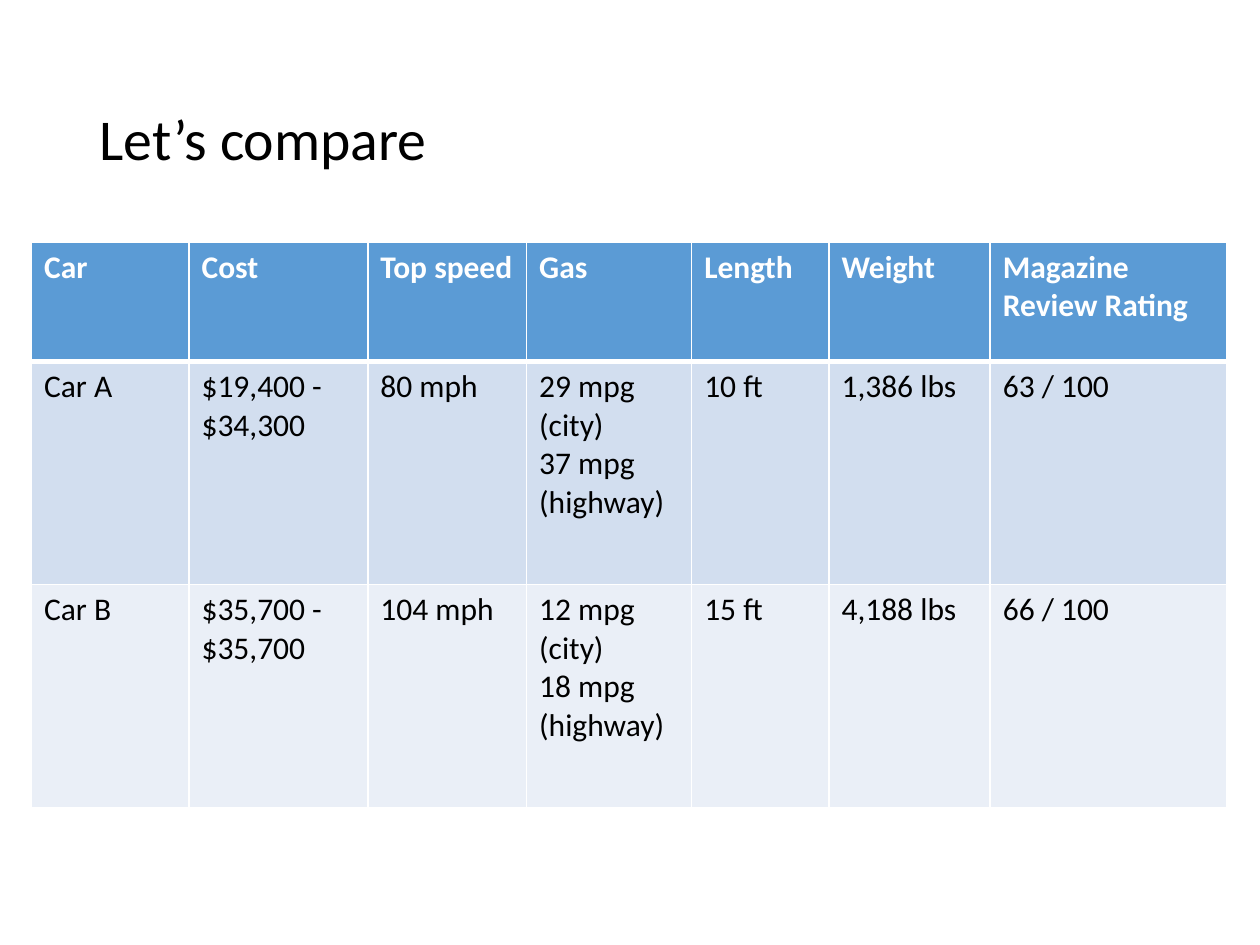
from typing import NamedTuple

from lxml.etree import SubElement
from pptx import Presentation
from pptx.dml.color import RGBColor
from pptx.enum.text import MSO_ANCHOR, PP_ALIGN
from pptx.oxml.ns import qn
from pptx.slide import Slide
from pptx.util import Inches, Pt

FONT = "Calibri"
COLUMN_WIDTHS = (1.25, 1.42, 1.26, 1.31, 1.09, 1.28, 1.88)


class TableRow(NamedTuple):
    height: float
    fill: str
    text_color: str
    bold: bool
    bottom_border: float
    cells: tuple[str, ...]


ROWS = (
    TableRow(0.95, "5B9BD5", "FFFFFF", True, 3,
             ("Car", "Cost", "Top speed", "Gas", "Length", "Weight", "Magazine Review Rating")),
    TableRow(1.77, "D2DEEF", "000000", False, 1,
             ("Car A", "$19,400 - $34,300", "80 mph", "29 mpg (city)\n37 mpg (highway)",
              "10 ft", "1,386 lbs", "63 / 100")),
    TableRow(1.77, "EAEFF7", "000000", False, 1,
             ("Car B", "$35,700 - $35,700", "104 mph", "12 mpg (city)\n18 mpg (highway)",
              "15 ft", "4,188 lbs", "66 / 100")),
)


def color(value: str) -> RGBColor:
    return RGBColor.from_string(value)


def format_text(text_frame, size: float, text_color: str, bold: bool = False) -> None:
    for paragraph in text_frame.paragraphs:
        for run in paragraph.runs:
            run.font.name = FONT
            run.font.size = Pt(size)
            run.font.bold = bold
            run.font.color.rgb = color(text_color)


def set_borders(cell, top: float, bottom: float) -> None:
    """Draw white cell borders; widths are in points."""
    properties = cell._tc.get_or_add_tcPr()
    widths = {"a:lnL": 1, "a:lnR": 1, "a:lnT": top, "a:lnB": bottom}
    for position, (tag, width) in enumerate(widths.items()):
        line = SubElement(properties, qn(tag), w=str(Pt(width)))
        fill = SubElement(line, qn("a:solidFill"))
        SubElement(fill, qn("a:srgbClr"), val="FFFFFF")
        properties.insert(position, line)  # borders come before the fill


def add_title(slide: Slide, text: str) -> None:
    title = slide.shapes.title
    title.left, title.top = Inches(0.69), Inches(0.4)
    title.width, title.height = Inches(8.62), Inches(1.45)
    text_frame = title.text_frame
    text_frame.text = text
    text_frame.word_wrap = True
    text_frame.vertical_anchor = MSO_ANCHOR.MIDDLE
    text_frame.paragraphs[0].alignment = PP_ALIGN.LEFT
    text_frame.paragraphs[0].line_spacing = 0.9
    format_text(text_frame, 33, "000000")


def add_comparison_table(slide: Slide) -> None:
    table = slide.shapes.add_table(
        len(ROWS), len(COLUMN_WIDTHS), Inches(0.25), Inches(1.92),
        Inches(sum(COLUMN_WIDTHS)), Inches(sum(row.height for row in ROWS))).table
    for column, width in zip(table.columns, COLUMN_WIDTHS):
        column.width = Inches(width)

    top_border = 1
    for table_row, row in zip(table.rows, ROWS):
        table_row.height = Inches(row.height)
        for cell, text in zip(table_row.cells, row.cells):
            cell.text_frame.text = text
            format_text(cell.text_frame, 18, row.text_color, row.bold)
            cell.fill.solid()
            cell.fill.fore_color.rgb = color(row.fill)
            set_borders(cell, top_border, row.bottom_border)
        top_border = row.bottom_border


def main() -> None:
    presentation = Presentation()
    presentation.slide_width, presentation.slide_height = Inches(10), Inches(7.5)
    # Title-only layout
    slide = presentation.slides.add_slide(presentation.slide_layouts[5])
    add_title(slide, "Let’s compare")
    add_comparison_table(slide)
    presentation.save("out.pptx")


if __name__ == "__main__":
    main()
